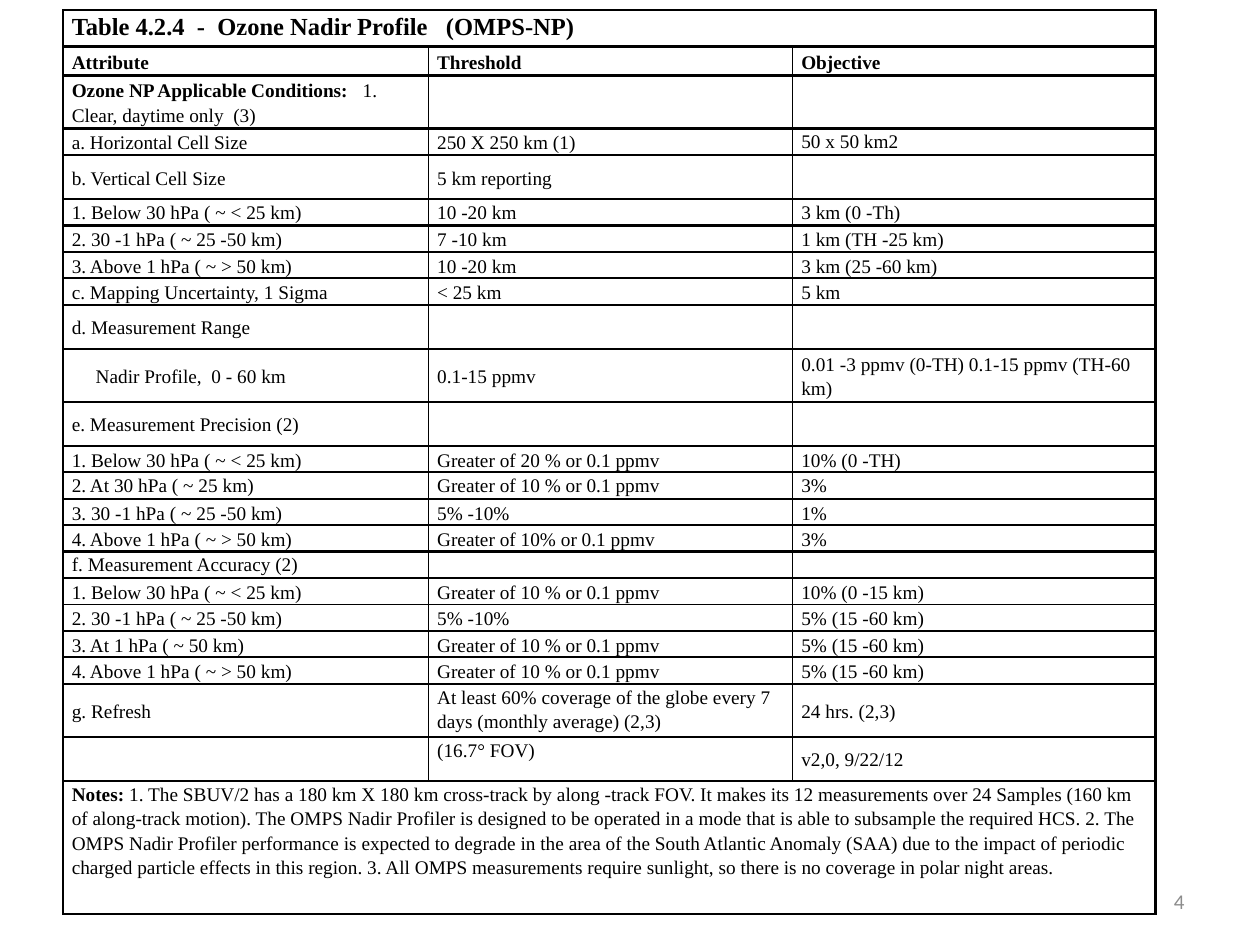
import pptx
import pptx.util
import pptx.dml.color
import pptx.enum.text
import pptx.oxml.ns
import lxml.etree

Inches, Pt = pptx.util.Inches, pptx.util.Pt
RGB = pptx.dml.color.RGBColor.from_string
ANCHOR = pptx.enum.text.MSO_ANCHOR
ALIGN = pptx.enum.text.PP_ALIGN

THEME = {
    "ink": "000000", "paper": "FFFFFF", "muted": "8C8C8C",
    "table_font": "Times New Roman", "number_font": "Calibri",
    "heading": 14, "body": 11, "number": 12,
    "thin": 1, "thick": 1.5, "spacing": 1.15,
}

TITLE = "Table 4.2.4  -  Ozone Nadir Profile   (OMPS-NP)"
NOTES = (
    "1. The SBUV/2 has a 180 km X 180 km cross-track by along -track FOV. "
    "It makes its 12 measurements over 24 Samples (160 km of along-track motion). "
    "The OMPS Nadir Profiler is designed to be operated in a mode that is able to "
    "subsample the required HCS. 2. The OMPS Nadir Profiler performance is expected "
    "to degrade in the area of the South Atlantic Anomaly (SAA) due to the impact of "
    "periodic charged particle effects in this region. 3. All OMPS measurements "
    "require sunlight, so there is no coverage in polar night areas."
)

# Each row: height, weight of the rule below it, cell texts.
# A cell with a bold lead-in is a (bold, plain) pair.
ROWS = [
    (0.29, "thick", [TITLE]),
    (0.23, "thick", ["Attribute", "Threshold", "Objective"]),
    (0.42, "thick", [("Ozone NP Applicable Conditions:", "   1.  Clear, daytime only  (3)"), "", ""]),
    (0.21, "thin", ["a. Horizontal Cell Size", "250 X 250 km (1)", "50 x 50 km2"]),
    (0.35, "thick", ["b. Vertical Cell Size", "5 km reporting", ""]),
    (0.21, "thick", ["1. Below 30 hPa ( ~ < 25 km)", "10 -20 km", "3 km (0 -Th)"]),
    (0.21, "thin", ["2. 30 -1 hPa ( ~ 25 -50 km)", "7 -10 km", "1 km (TH -25 km)"]),
    (0.21, "thick", ["3. Above 1 hPa ( ~ > 50 km)", "10 -20 km", "3 km (25 -60 km)"]),
    (0.21, "thick", ["c. Mapping Uncertainty, 1 Sigma", "< 25 km", "5 km"]),
    (0.35, "thin", ["d. Measurement Range", "", ""]),
    (0.42, "thick", ["Nadir Profile,  0 - 60 km", "0.1-15 ppmv",
                     "0.01 -3 ppmv (0-TH) 0.1-15 ppmv (TH-60 km)"]),
    (0.35, "thin", ["e. Measurement Precision (2)", "", ""]),
    (0.21, "thick", ["1. Below 30 hPa ( ~ < 25 km)", "Greater of 20 % or 0.1 ppmv", "10% (0 -TH)"]),
    (0.21, "thick", ["2. At 30 hPa ( ~ 25 km)", "Greater of 10 % or 0.1 ppmv", "3%"]),
    (0.21, "thin", ["3. 30 -1 hPa ( ~ 25 -50 km)", "5% -10%", "1%"]),
    (0.21, "thick", ["4. Above 1 hPa ( ~ > 50 km)", "Greater of 10% or 0.1 ppmv", "3%"]),
    (0.21, "thin", ["f. Measurement Accuracy (2)", "", ""]),
    (0.21, "thin", ["1. Below 30 hPa ( ~ < 25 km)", "Greater of 10 % or 0.1 ppmv", "10% (0 -15 km)"]),
    (0.21, "thick", ["2. 30 -1 hPa ( ~ 25 -50 km)", "5% -10%", "5% (15 -60 km)"]),
    (0.21, "thick", ["3. At 1 hPa ( ~ 50 km)", "Greater of 10 % or 0.1 ppmv", "5% (15 -60 km)"]),
    (0.21, "thin", ["4. Above 1 hPa ( ~ > 50 km)", "Greater of 10 % or 0.1 ppmv", "5% (15 -60 km)"]),
    (0.42, "thick", ["g. Refresh",
                     "At least 60% coverage of the globe every 7 days (monthly average) (2,3)",
                     "24 hrs. (2,3)"]),
    (0.35, "thick", ["", "(16.7° FOV)", "v2,0, 9/22/12"]),
    (1.06, "thick", [("Notes: ", NOTES)]),
]
COLUMN_WIDTHS = [2.9, 2.89, 2.88]
TOP_ROWS = {0, 5, 13, 16, 23}
TOP_CELLS = {(3, 2), (21, 1), (22, 1)}
BOLD_ROWS = {0, 1}
INDENTED_CELL = (10, 0)
FILLED_CELL = (8, 0)


def write(para, text, *, size, font, color, bold=False, align=None, spacing=None):
    """Append text to a paragraph; empty text only sets the height of its line."""
    if align is not None:
        para.alignment = align
    if spacing is not None:
        para.line_spacing = spacing
    if not text:
        end = lxml.etree.SubElement(para._p, pptx.oxml.ns.qn("a:endParaRPr"))
        end.set("sz", str(size * 100))
        return
    span = para.add_run()
    span.text = text
    span.font.size = Pt(size)
    span.font.name = font
    span.font.bold = bold
    span.font.color.rgb = RGB(color)


def draw_border(cell, side, weight):
    qn = pptx.oxml.ns.qn
    properties = cell._tc.get_or_add_tcPr()
    line = lxml.etree.SubElement(properties, qn("a:ln" + side), w=str(Pt(THEME[weight])))
    fill = lxml.etree.SubElement(line, qn("a:solidFill"))
    lxml.etree.SubElement(fill, qn("a:srgbClr"), val=THEME["ink"])


def format_cell(cell, row, column):
    last = len(COLUMN_WIDTHS) - 1
    reach = last if cell.is_merge_origin else column
    draw_border(cell, "L", "thin")
    draw_border(cell, "R", "thick" if reach == last else "thin")
    draw_border(cell, "T", ROWS[row - 1][1] if row else "thin")
    draw_border(cell, "B", ROWS[row][1])
    if (row, column) == FILLED_CELL:
        cell.fill.solid()
        cell.fill.fore_color.rgb = RGB(THEME["paper"])
    else:
        cell.fill.background()
    cell.margin_left = cell.margin_right = Inches(0.07)
    cell.margin_top = cell.margin_bottom = 0
    at_top = row in TOP_ROWS or (row, column) in TOP_CELLS
    cell.vertical_anchor = ANCHOR.TOP if at_top else ANCHOR.MIDDLE


def fill_cell(cell, content, row, column):
    para = cell.text_frame.paragraphs[0]
    if (row, column) == INDENTED_CELL:
        para._p.get_or_add_pPr().set("marL", str(Inches(0.19)))
    if isinstance(content, tuple):
        spans = [(content[0], True), (content[1], False)]
    else:
        spans = [(content, row in BOLD_ROWS)]
    for text, bold in spans:
        write(para, text, size=THEME["body" if row else "heading"],
              font=THEME["table_font"], color=THEME["ink"], bold=bold,
              spacing=THEME["spacing"])


def add_requirements_table(page):
    frame = page.shapes.add_table(
        len(ROWS), len(COLUMN_WIDTHS), Inches(0.5), Inches(0.08),
        Inches(sum(COLUMN_WIDTHS)), Inches(sum(height for height, _, _ in ROWS)))
    table = frame.table
    table.first_row = table.horz_banding = False
    for column, width in enumerate(COLUMN_WIDTHS):
        table.columns[column].width = Inches(width)
    for row, (height, _, contents) in enumerate(ROWS):
        table.rows[row].height = Inches(height)
        if len(contents) == 1:
            table.cell(row, 0).merge(table.cell(row, len(COLUMN_WIDTHS) - 1))
        for column in range(len(COLUMN_WIDTHS)):
            cell = table.cell(row, column)
            format_cell(cell, row, column)
            fill_cell(cell, contents[column] if column < len(contents) else "", row, column)


def add_page_number(page):
    box = page.shapes.add_textbox(Inches(7.17), Inches(6.95), Inches(2.33), Inches(0.4))
    box.text_frame.word_wrap = True
    box.text_frame.vertical_anchor = ANCHOR.MIDDLE
    write(box.text_frame.paragraphs[0], "4", size=THEME["number"],
          font=THEME["number_font"], color=THEME["muted"], align=ALIGN.RIGHT)


def main():
    deck = pptx.Presentation()
    deck.slide_width, deck.slide_height = Inches(10), Inches(7.5)
    page = deck.slides.add_slide(deck.slide_layouts[6])
    add_requirements_table(page)
    add_page_number(page)
    deck.save("out.pptx")


if __name__ == "__main__":
    main()
